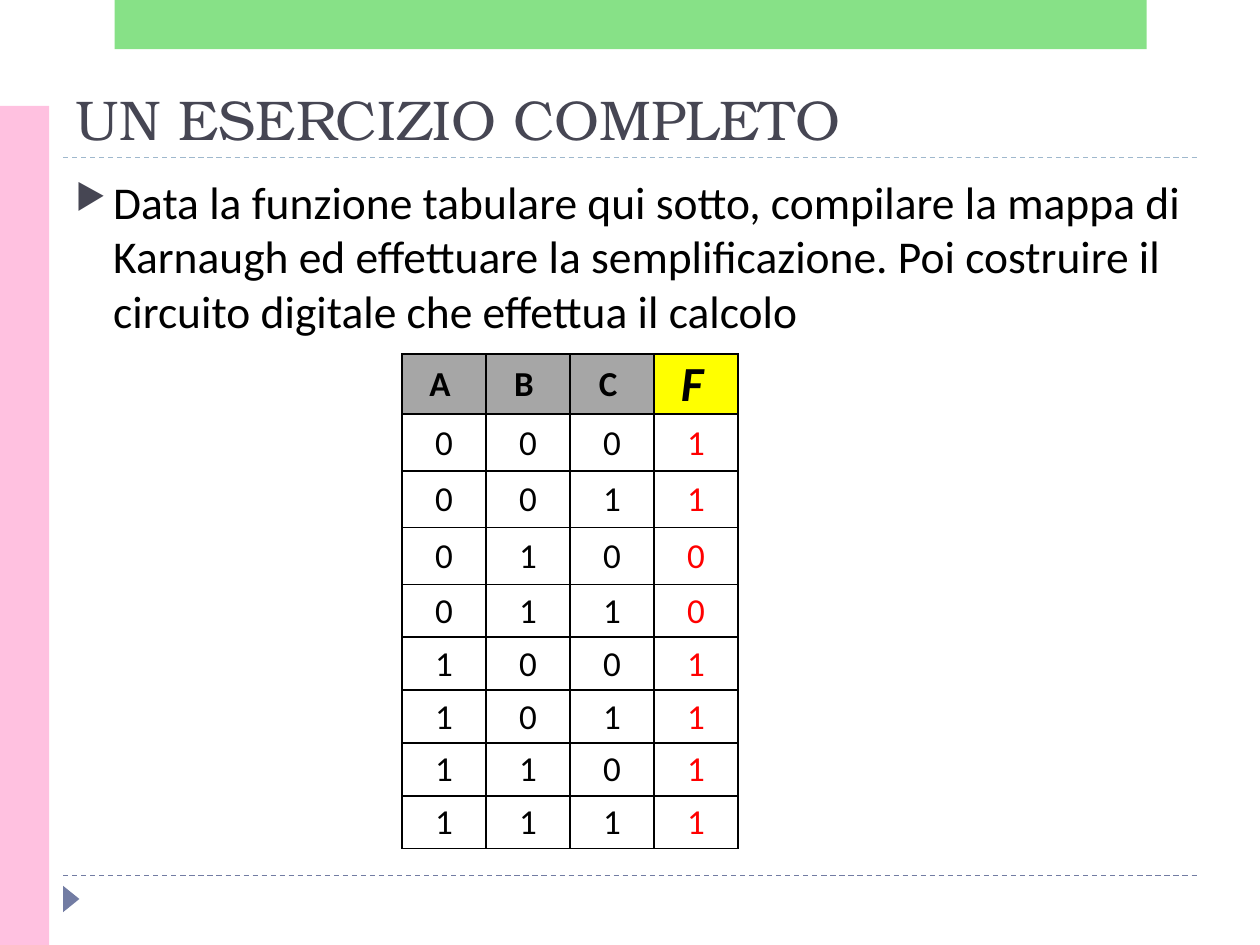
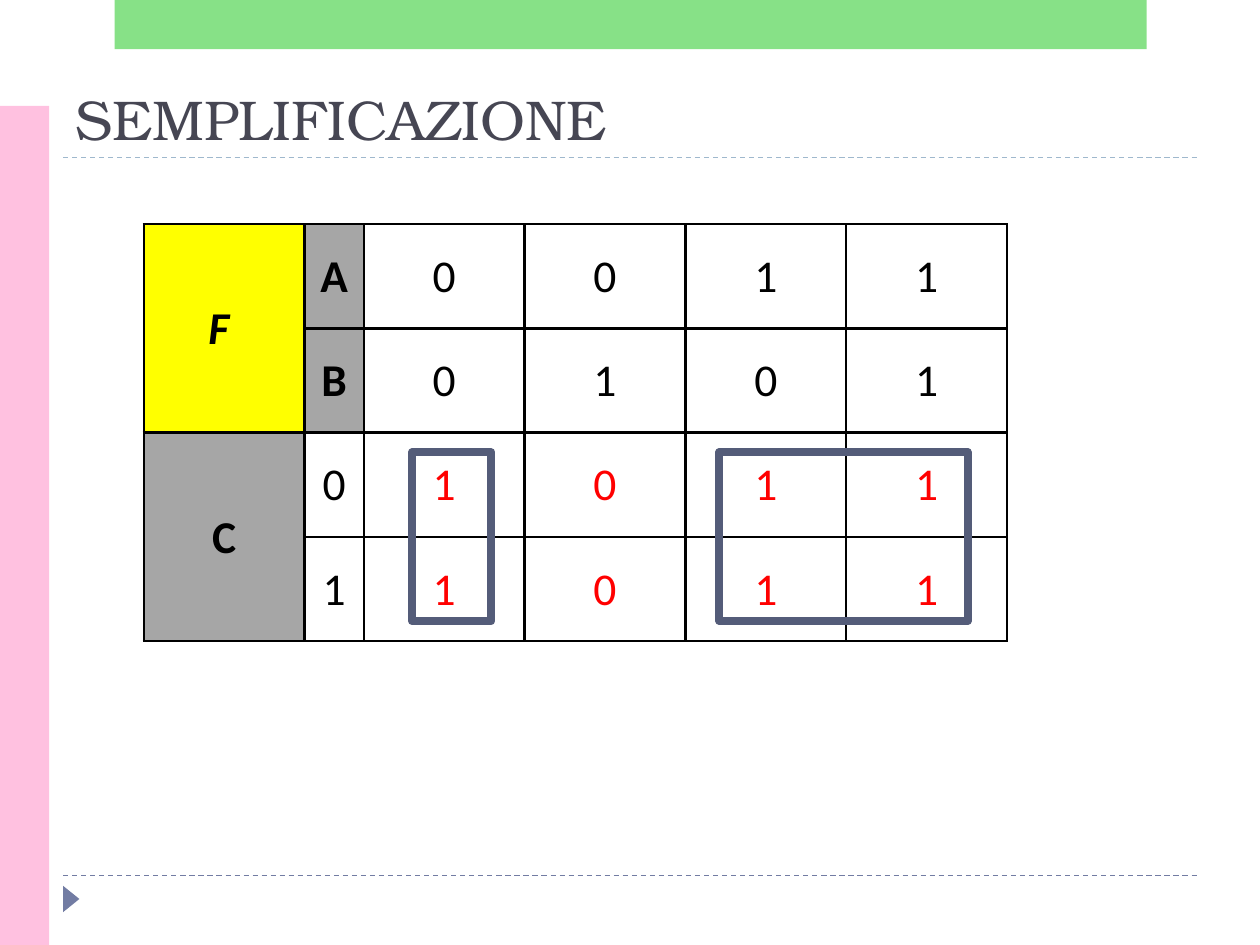
"""Build two slides on a Boolean function: its truth table and its Karnaugh map."""
from dataclasses import dataclass

from lxml import etree
from pptx import Presentation
from pptx import util as u
from pptx.dml.color import RGBColor
from pptx.enum import dml, shapes, text
from pptx.oxml import parse_xml
from pptx.oxml.ns import nsdecls, qn


@dataclass(frozen=True)
class Theme:
    title_font: str = "TeX Gyre Bonum"
    body_font: str = "Calibri"
    title_size: int = 32
    body_size: int = 26
    ink: str = "000000"
    heading: str = "464653"
    accent: str = "727CA3"
    rule: str = "9FB8CD"
    frame: str = "545C79"
    side_band: str = "FFC1E0"
    top_band: str = "62D862"
    variable: str = "A6A6A6"
    function: str = "FFFF00"
    value: str = "FF0000"


T = Theme()
prs = Presentation()
prs.slide_width, prs.slide_height = u.Inches(10), u.Inches(7.5)
COLUMNS = 100


def grid(*units):
    return [u.Emu(round(n * prs.slide_width / COLUMNS)) for n in units]


def add_run(p, words, size, color=T.ink, font=T.body_font, bold=False, italic=False):
    r = p.add_run()
    r.text = words
    r.font.name, r.font.size = font, u.Pt(size)
    r.font.bold, r.font.italic = bold, italic
    r.font.color.rgb = RGBColor.from_string(color)


RECT, TRIANGLE = shapes.MSO_SHAPE.RECTANGLE, shapes.MSO_SHAPE.ISOSCELES_TRIANGLE
rules = [(69.5, T.accent), (12.5, T.rule)]
bands = [
    (TRIANGLE, (4.6, 70.7, 2.1, 1.3), T.accent, 90, 100),
    (RECT, (0, 8.4, 3.9, 66.6), T.side_band, 0, 100),
    (RECT, (9.1, 0, 81.9, 3.9), T.top_band, 0, 76),
]
truth_rows = [f"{n:03b}{f}" for n, f in enumerate("11001111")]
slides = [
    dict(
        title="UN ESERCIZIO COMPLETO",
        body="Data la funzione tabulare qui sotto, compilare la mappa di Karnaugh ed "
             "effettuare la semplificazione. Poi costruire il circuito digitale che "
             "effettua il calcolo",
        at=(31.9, 28.1), cols=[6.67] * 4, rows=[4.5] * 4 + [4.2] * 5,
        cells=["ABCF"] + truth_rows, size=20, f_size=28, label_end=" ",
        border=1, values_from=(1, 3), merges=[], frames=[],
    ),
    dict(
        title="SEMPLIFICAZIONE", body="",
        at=(11.4, 17.8), cols=[12.77, 4.7] + [12.77] * 4, rows=[8.27] * 4,
        cells=["FA0011", " B0101", "C01011", " 11011"], size=26, f_size=26, label_end="",
        border=1.5, values_from=(2, 2), merges=[0, 2],
        frames=[(32.7, 35.9, 6.3, 13.4), (57.1, 35.9, 19.7, 13.4)],
    ),
]

for page in slides:
    s = prs.slides.add_slide(prs.slide_layouts[6])

    for y, color in rules:
        line = s.shapes.add_connector(shapes.MSO_CONNECTOR.STRAIGHT, *grid(5, y, 95, y))
        line.line.color.rgb = RGBColor.from_string(color)
        line.line.width = u.Pt(0.75)
        line.line.dash_style = dml.MSO_LINE.DASH
        etree.SubElement(line._element.spPr, qn("a:effectLst"))

    for kind, place, color, turn, opacity in bands:
        sp = s.shapes.add_shape(kind, *grid(*place))
        sp.shadow.inherit = False
        sp.rotation = turn
        sp.fill.solid()
        sp.fill.fore_color.rgb = RGBColor.from_string(color)
        sp.line.fill.background()
        if opacity < 100:
            clr = sp._element.spPr.find(".//" + qn("a:srgbClr"))
            etree.SubElement(clr, qn("a:alpha"), val=str(opacity * 1000))

    tf = s.shapes.add_textbox(*grid(5, 5.5, 90, 7)).text_frame
    tf.word_wrap = True
    tf.vertical_anchor = text.MSO_ANCHOR.BOTTOM
    add_run(tf.paragraphs[0], page["title"], T.title_size, T.heading, T.title_font)

    if page["body"]:
        tf = s.shapes.add_textbox(*grid(5, 13.3, 90, 54)).text_frame
        tf.word_wrap = True
        p = tf.paragraphs[0]
        pPr = p._p.get_or_add_pPr()
        indent = grid(3)[0]
        pPr.set("marL", str(indent))
        pPr.set("indent", str(-indent))
        etree.SubElement(etree.SubElement(pPr, qn("a:buClr")), qn("a:srgbClr"), val=T.heading)
        etree.SubElement(pPr, qn("a:buSzPct"), val="76000")
        etree.SubElement(pPr, qn("a:buChar"), char="▶")
        add_run(p, page["body"], T.body_size)

    cols, rows = page["cols"], page["rows"]
    place = grid(*page["at"], sum(cols), sum(rows))
    table = s.shapes.add_table(len(rows), len(cols), *place).table
    table.first_row = table.horz_banding = False
    for col, width in zip(table.columns, grid(*cols)):
        col.width = width
    for row, height in zip(table.rows, grid(*rows)):
        row.height = height
    for top in page["merges"]:
        table.cell(top, 0).merge(table.cell(top + 1, 0))

    first_row, first_col = page["values_from"]
    for i, row in enumerate(page["cells"]):
        for j, mark in enumerate(row):
            cell = table.cell(i, j)
            cell.vertical_anchor = text.MSO_ANCHOR.MIDDLE
            cell.margin_left = cell.margin_top = cell.margin_right = u.Inches(0.01)
            cell.margin_bottom = 0
            for side in "LRTB":
                cell._tc.get_or_add_tcPr().append(parse_xml(
                    f'<a:ln{side} {nsdecls("a")} w="{u.Pt(page["border"])}"><a:solidFill>'
                    f'<a:srgbClr val="{T.ink}"/></a:solidFill></a:ln{side}>'))
            if mark.isalpha():
                cell.fill.solid()
                shade = T.function if mark == "F" else T.variable
                cell.fill.fore_color.rgb = RGBColor.from_string(shade)
            else:
                cell.fill.background()
            if mark == " ":
                continue
            p = cell.text_frame.paragraphs[0]
            p.alignment = text.PP_ALIGN.CENTER
            if mark == "F":
                add_run(p, mark, page["f_size"], bold=True, italic=True)
                add_run(p, " ", page["size"], bold=True)
            elif mark.isalpha():
                add_run(p, mark + page["label_end"], page["size"], bold=True)
            else:
                is_value = i >= first_row and j >= first_col
                add_run(p, mark, page["size"], T.value if is_value else T.ink)

    for place in page["frames"]:
        sp = s.shapes.add_shape(RECT, *grid(*place))
        sp.shadow.inherit = False
        sp.fill.background()
        sp.line.color.rgb = RGBColor.from_string(T.frame)
        sp.line.width = u.Pt(4.5)

prs.save("out.pptx")
